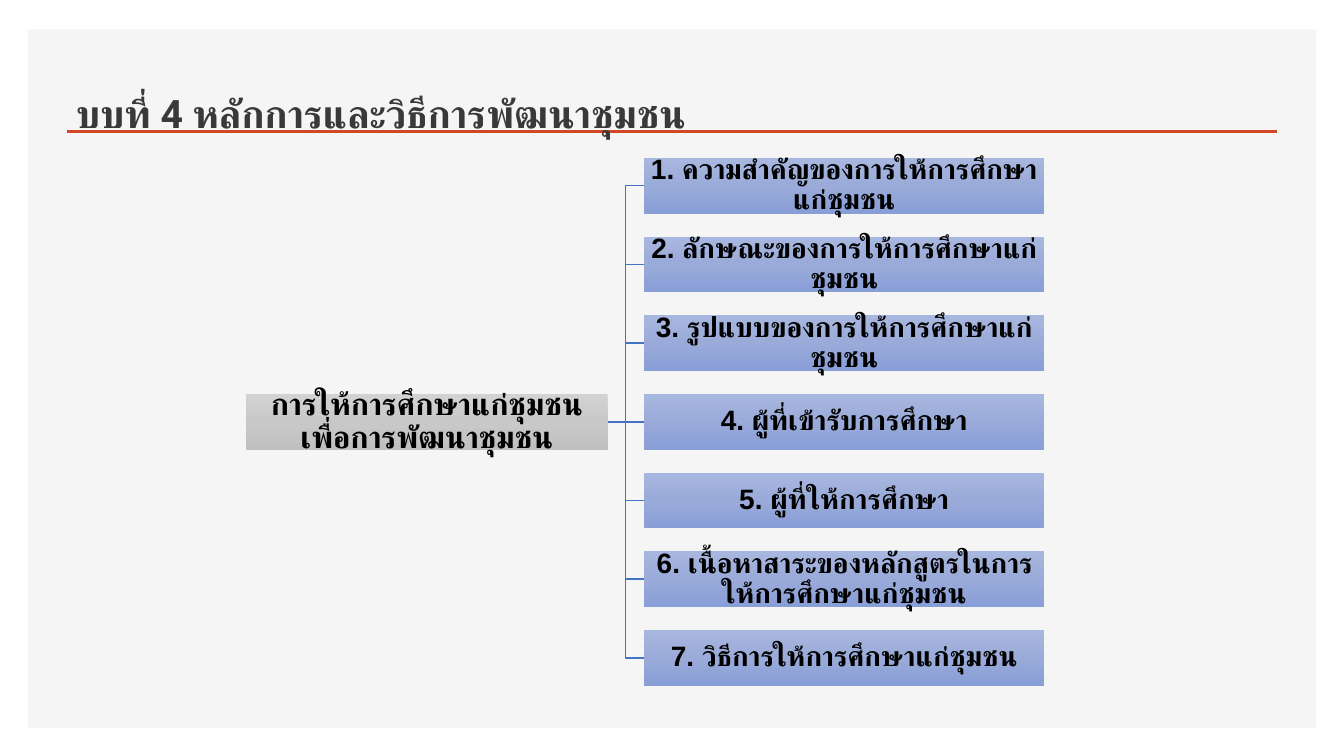
from copy import deepcopy

from lxml.etree import SubElement
from pptx import Presentation
from pptx.dml.color import RGBColor
from pptx.enum.lang import MSO_LANGUAGE_ID as Lang
from pptx.enum.shapes import MSO_CONNECTOR as Connector, MSO_SHAPE as Preset
from pptx.enum.text import MSO_ANCHOR as Anchor, MSO_AUTO_SIZE as AutoSize, PP_ALIGN as Align
from pptx.oxml.ns import qn
from pptx.util import Pt

TOPICS = [
    "1. ความสำคัญของการให้การศึกษาแก่ชุมชน",
    "2. ลักษณะของการให้การศึกษาแก่ชุมชน",
    "3. รูปแบบของการให้การศึกษาแก่ชุมชน",
    "4. ผู้ที่เข้ารับการศึกษา",
    "5. ผู้ที่ให้การศึกษา",
    "6. เนื้อหาสาระของหลักสูตรในการให้การศึกษาแก่ชุมชน",
    "7. วิธีการให้การศึกษาแก่ชุมชน",
]
GREYS = ["D2D2D2", "C8C8C8", "C0C0C0"]
BLUES = ["A8B7DF", "9AABD9", "889ED7"]
BRANCH = "4472C4"


def color(code):
    return RGBColor.from_string(code)


class Board:
    heading_font = "Roboto"
    body_font = "Arial"

    def __init__(self, slide):
        self.slide = slide
        self.shapes = slide.shapes

    def label(self, frame, text, size, font, ink, align):
        paragraph = frame.paragraphs[0]
        paragraph.alignment = align
        run = paragraph.add_run()
        run.text = text
        run.font.name = font
        run.font.size = Pt(size)
        run.font.bold = True
        run.font.color.rgb = color(ink)
        run.font.language_id = Lang.THAI
        SubElement(run.font._element, qn("a:cs"), typeface=font)
        return paragraph

    def title(self, text, left, top, width, height):
        heading = self.shapes.title
        heading.left, heading.top = Pt(left), Pt(top)
        heading.width, heading.height = Pt(width), Pt(height)
        frame = heading.text_frame
        frame.auto_size = AutoSize.NONE
        frame.word_wrap = True
        frame.vertical_anchor = Anchor.BOTTOM
        self.label(frame, text, 28, self.heading_font, "3B3838", Align.LEFT)
        self.shapes.element.append(heading.element)

    def rect(self, left, top, width, height):
        shape = self.shapes.add_shape(Preset.RECTANGLE, Pt(left), Pt(top), Pt(width), Pt(height))
        shape.shadow.inherit = False
        shape.line.fill.background()
        return shape

    def panel(self, left, top, width, height, fill):
        shape = self.rect(left, top, width, height)
        shape.fill.solid()
        shape.fill.fore_color.rgb = color(fill)

    def box(self, text, left, top, width, height, shades, size, inset):
        shape = self.rect(left, top, width, height)
        shape.fill.gradient()
        shape.fill.gradient_angle = 270
        first = shape.element.spPr.find(".//" + qn("a:gs"))
        first.addnext(deepcopy(first))
        for stop, shade, position in zip(shape.fill.gradient_stops, shades, (0, 0.5, 1)):
            stop.color.rgb = color(shade)
            stop.position = position
        frame = shape.text_frame
        frame.word_wrap = True
        frame.vertical_anchor = Anchor.MIDDLE
        frame.margin_left = frame.margin_right = Pt(inset)
        frame.margin_top = frame.margin_bottom = Pt(inset)
        paragraph = self.label(frame, text, size, self.body_font, "000000", Align.CENTER)
        paragraph.line_spacing = 0.9

    def line(self, x1, y1, x2, y2, ink, weight):
        rule = self.shapes.add_connector(Connector.STRAIGHT, Pt(x1), Pt(y1), Pt(x2), Pt(y2))
        rule.line.color.rgb = color(ink)
        rule.line.width = Pt(weight)
        SubElement(rule.element.spPr, qn("a:effectLst"))

    def elbow(self, x1, y1, x2, y2, ink, weight):
        middle = (x1 + x2) / 2
        builder = self.shapes.build_freeform(Pt(x1), Pt(y1))
        corners = [(middle, y1), (middle, y2), (x2, y2)]
        builder.add_line_segments([(Pt(x), Pt(y)) for x, y in corners], close=False)
        branch = builder.convert_to_shape()
        branch.shadow.inherit = False
        branch.fill.background()
        branch.line.color.rgb = color(ink)
        branch.line.width = Pt(weight)


def main():
    deck = Presentation()
    deck.slide_width, deck.slide_height = Pt(960), Pt(540)
    board = Board(deck.slides.add_slide(deck.slide_layouts[5]))

    board.panel(20, 21, 920, 499, "F5F5F5")
    board.line(47.7, 94, 912.3, 94, "D24726", 2)
    board.title("บบที่ 4 หลักการและวิธีการพัฒนาชุมชน", 47, 50.4, 541.5, 50.4)

    root_left, root_width = 175.7, 258.4
    topic_left, topic_width = 460, 286
    first_top, pitch, height = 112.8, 56.2, 39.8
    tops = [first_top + pitch * row for row in range(len(TOPICS))]
    center = len(TOPICS) // 2
    root_top = tops[center]
    root_right, root_middle = root_left + root_width, root_top + height / 2

    for row, top in enumerate(tops):
        draw = board.line if row == center else board.elbow
        draw(root_right, root_middle, topic_left, top + height / 2, BRANCH, 1)

    board.box("การให้การศึกษาแก่ชุมชนเพื่อการพัฒนาชุมชน",
              root_left, root_top, root_width, height, GREYS, 22, 1.4)
    for topic, top in zip(TOPICS, tops):
        board.box(topic, topic_left, top, topic_width, height, BLUES, 20, 1)

    deck.save("out.pptx")


if __name__ == "__main__":
    main()
